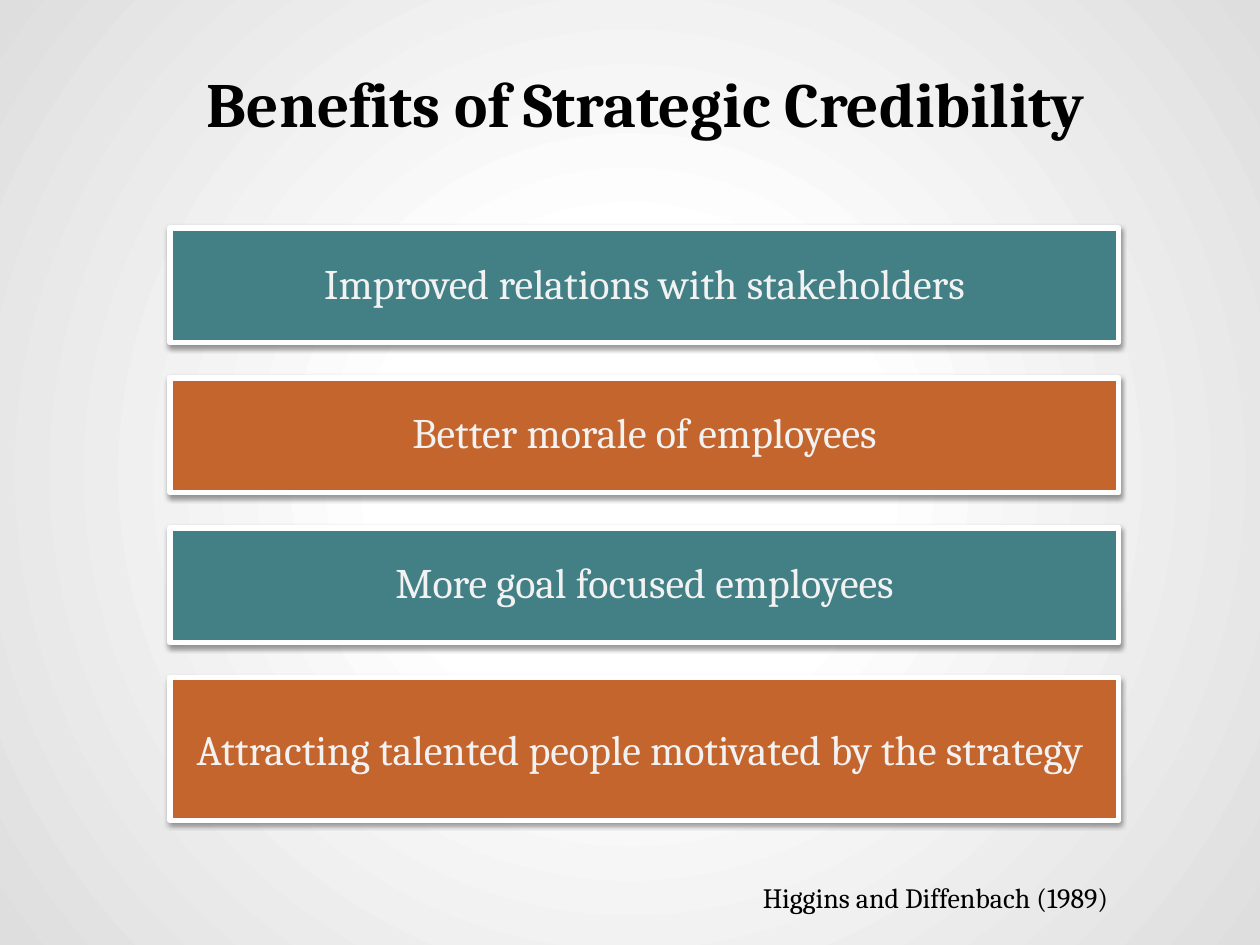
import lxml.etree
import pptx
import pptx.dml.color
import pptx.enum.shapes
import pptx.enum.text
import pptx.oxml
import pptx.oxml.ns
import pptx.util

COLUMNS, ROWS = 100, 75
TEAL, ORANGE, WHITE, PALE, BLACK = "438086", "C4652D", "FFFFFF", "F2F2F2", "000000"
ANCHOR = pptx.enum.text.MSO_ANCHOR


def color(value):
    return pptx.dml.color.RGBColor.from_string(value)


class SlideBuilder:
    font = "Cambria"

    def __init__(self, presentation):
        self.column = presentation.slide_width / COLUMNS
        self.row = presentation.slide_height / ROWS
        self.slide = presentation.slides.add_slide(presentation.slide_layouts[6])

    def box(self, left, top, width, height):
        return (round(left * self.column), round(top * self.row),
                round(width * self.column), round(height * self.row))

    def background(self, stops):
        fill = self.slide.background.fill
        fill.gradient()
        properties = self.slide.background._cSld.bg.bgPr
        stop_xml = "".join(
            f'<a:gs pos="{position * 1000}"><a:srgbClr val="{value}"/></a:gs>'
            for position, value in stops)
        gradient = pptx.oxml.parse_xml(
            f'<a:gradFill {pptx.oxml.ns.nsdecls("a")} rotWithShape="1">'
            f'<a:gsLst>{stop_xml}</a:gsLst><a:path path="circle">'
            '<a:fillToRect l="50000" t="50000" r="50000" b="50000"/>'
            '</a:path></a:gradFill>')
        properties.replace(properties.find(pptx.oxml.ns.qn("a:gradFill")), gradient)

    def set_text(self, shape, text, size, value, bold=False, anchor=ANCHOR.TOP):
        frame = shape.text_frame
        frame.text = text
        frame.word_wrap = True
        frame.vertical_anchor = anchor
        paragraph = frame.paragraphs[0]
        paragraph.alignment = pptx.enum.text.PP_ALIGN.CENTER
        font = paragraph.runs[0].font
        font.name, font.size, font.bold = self.font, pptx.util.Pt(size), bold
        font.color.rgb = color(value)
        return frame

    def label(self, area, text, size, **style):
        shape = self.slide.shapes.add_textbox(*self.box(*area))
        frame = self.set_text(shape, text, size, BLACK, **style)
        frame.auto_size = pptx.enum.text.MSO_AUTO_SIZE.SHAPE_TO_FIT_TEXT
        return frame

    def title(self, area, text):
        frame = self.label(area, text, 36, bold=True, anchor=ANCHOR.BOTTOM)
        margin = pptx.util.Inches(0.1)
        frame.margin_left = frame.margin_right = margin
        frame.margin_top = frame.margin_bottom = margin
        properties = frame.paragraphs[0]._p.get_or_add_pPr()
        properties.set("marL", "0")
        properties.set("indent", str(pptx.util.Inches(0.25)))

    def bar(self, area, text, fill, anchor):
        shape = self.slide.shapes.add_shape(
            pptx.enum.shapes.MSO_SHAPE.RECTANGLE, *self.box(*area))
        shape.fill.solid()
        shape.fill.fore_color.rgb = color(fill)
        shape.line.color.rgb = color(WHITE)
        shape.line.width = pptx.util.Pt(3)
        self.shadow(shape)
        frame = self.set_text(shape, text, 24, PALE, anchor=anchor)
        if anchor == ANCHOR.BOTTOM:
            frame.margin_bottom = pptx.util.Inches(0.28)

    def shadow(self, shape):
        shape.shadow.inherit = False
        qualified = pptx.oxml.ns.qn
        effects = shape._element.spPr.find(qualified("a:effectLst"))
        outer = lxml.etree.SubElement(
            effects, qualified("a:outerShdw"), blurRad=str(pptx.util.Pt(3.1)),
            dist=str(pptx.util.Pt(1.6)), dir="5400000", rotWithShape="0")
        shade = lxml.etree.SubElement(outer, qualified("a:srgbClr"), val=BLACK)
        lxml.etree.SubElement(shade, qualified("a:alpha"), val="38000")


def main():
    presentation = pptx.Presentation()
    presentation.slide_width = pptx.util.Inches(10)
    presentation.slide_height = pptx.util.Inches(7.5)
    builder = SlideBuilder(presentation)
    builder.background([(0, WHITE), (30, WHITE), (100, "DEDEDE")])
    builder.title((5, 4, 90, 8.1), "Benefits of Strategic Credibility")

    benefits = [
        ("Improved relations with stakeholders", 9.1, ANCHOR.BOTTOM),
        ("Better morale of employees", 9.1, ANCHOR.BOTTOM),
        ("More goal focused employees", 9.1, ANCHOR.BOTTOM),
        ("Attracting talented people motivated by the strategy ", 11.3, ANCHOR.MIDDLE),
    ]
    for index, (text, height, anchor) in enumerate(benefits):
        area = (13.5, 18.1 + 11.9 * index, 75.3, height)
        builder.bar(area, text, (TEAL, ORANGE)[index % 2], anchor)

    builder.label((47.3, 69.4, 53.9, 3.7), "Higgins and Diffenbach (1989)", 16)
    presentation.save("out.pptx")


if __name__ == "__main__":
    main()
